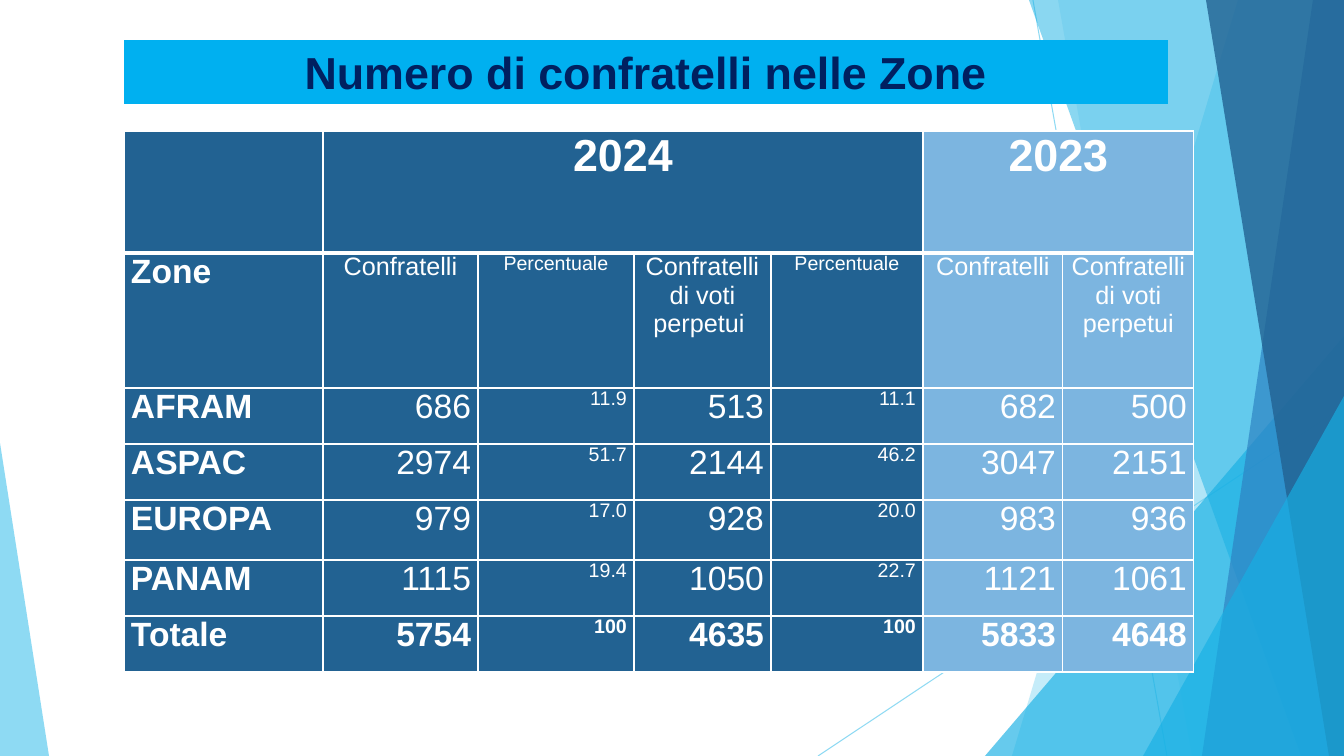
from pptx import Presentation
from pptx import util as u
from pptx.dml.color import RGBColor
from pptx.enum import shapes, text
from pptx.oxml import parse_xml
from pptx.oxml.ns import nsdecls, qn
from lxml import etree

PX = 914400 / 100.8
WIDTH, HEIGHT = 1344, 756
FONT = "Arial"
COLORS = {
    "white": "FFFFFF", "sky": "5FCBEF", "cyan": "17B0E4", "blue": "2E83C3",
    "navy": "226292", "pale": "7CB5E0", "banner": "00B0F0", "title": "002060",
}

LINES = [(1033, 0, 1167, HEIGHT), (WIDTH, 406, 818, HEIGHT)]
# Top-left x, bottom-left x, colour, opacity; each band runs to the right edge.
BACK_BANDS = [(1238, 1012, "sky", 36), (1058, 1192, "sky", 20)]
FRONT_BANDS = [(1029, 1301, "cyan", 50), (1313, 1202, "blue", 70), (1206, 1329, "navy", 80)]

COLUMNS = [199, 155, 156, 137, 152, 140, 131]
ROWS = [122, 135, 56, 56, 60, 56, 56]
FIRST_2023, PERCENT_COLUMNS = 5, (2, 4)
CELLS = [
    ["", "2024", "", "", "", "2023", ""],
    ["Zone", "Confratelli", "Percentuale", "Confratelli di voti perpetui ",
     "Percentuale", "Confratelli", "Confratelli di voti perpetui"],
    ["AFRAM", "686", "11.9", "513", "11.1", "682", "500"],
    ["ASPAC", "2974", "51.7", "2144", "46.2", "3047", "2151"],
    ["EUROPA", "979", "17.0", "928", "20.0", "983", "936"],
    ["PANAM", "1115", "19.4", "1050", "22.7", "1121", "1061"],
    ["Totale", "5754", "100", "4635", "100", "5833", "4648"],
]


def px(length):
    return u.Emu(round(length * PX))


def rgb(name):
    return RGBColor.from_string(COLORS[name])


def set_opacity(fill_parent, percent):
    color = fill_parent.find(".//" + qn("a:srgbClr"))
    etree.SubElement(color, qn("a:alpha"), val=str(percent * 1000))


def paint(shape, color, opacity):
    shape.shadow.inherit = False
    shape.fill.solid()
    shape.fill.fore_color.rgb = rgb(color)
    shape.line.fill.background()
    set_opacity(shape.element.spPr, opacity)


def add_line(page, x1, y1, x2, y2):
    line = page.shapes.add_connector(
        shapes.MSO_CONNECTOR.STRAIGHT, px(x1), px(y1), px(x2), px(y2))
    line.line.color.rgb = rgb("sky")
    line.line.width = u.Pt(0.75)
    set_opacity(line.element.spPr, 70)
    etree.SubElement(line.element.spPr, qn("a:effectLst"))


def add_band(page, top_x, bottom_x, color, opacity):
    builder = page.shapes.build_freeform(top_x, 0, scale=PX)
    builder.add_line_segments([(WIDTH, 0), (WIDTH, HEIGHT), (bottom_x, HEIGHT)])
    paint(builder.convert_to_shape(), color, opacity)


def add_triangle(page, left, top, width, apex, color, opacity):
    """Triangle standing on the bottom edge; apex is 0 (left) to 1 (right)."""
    triangle = page.shapes.add_shape(
        shapes.MSO_SHAPE.ISOSCELES_TRIANGLE, px(left), px(top), px(width), px(HEIGHT - top))
    triangle.adjustments[0] = apex
    paint(triangle, color, opacity)


def add_backdrop(page):
    for line in LINES:
        add_line(page, *line)
    for band in BACK_BANDS:
        add_band(page, *band)
    add_triangle(page, 985, 336, 359, 1, "cyan", 66)
    for band in FRONT_BANDS:
        add_band(page, *band)
    add_triangle(page, 1143, 396, 201, 1, "cyan", 66)
    add_triangle(page, 0, 443, 49, 0, "sky", 70)


def format_title(page, wording):
    title = page.shapes.title
    title.left, title.top, title.width, title.height = px(124), px(40), px(1044), px(64)
    title.fill.solid()
    title.fill.fore_color.rgb = rgb("banner")
    frame = title.text_frame
    frame.text = wording
    frame.auto_size = text.MSO_AUTO_SIZE.NONE
    frame.vertical_anchor = text.MSO_ANCHOR.MIDDLE
    para = frame.paragraphs[0]
    para.alignment = text.PP_ALIGN.CENTER
    set_font(para.font, 32, True, "title")
    page.shapes.element.append(title.element)  # in front of the backdrop


def set_font(font, size, bold, color):
    font.name, font.size, font.bold = FONT, u.Pt(size), bold
    font.color.rgb = rgb(color)


def add_borders(cell, top, bottom):
    properties = cell._tc.get_or_add_tcPr()
    for side, points in (("L", 1), ("R", 1), ("T", top), ("B", bottom)):
        properties.append(parse_xml(
            f'<a:ln{side} {nsdecls("a")} w="{u.Pt(points)}"><a:solidFill>'
            f'<a:srgbClr val="{COLORS["white"]}"/></a:solidFill></a:ln{side}>'))


def cell_style(row, column):
    """Return size, boldness and alignment by place in the table."""
    align = text.PP_ALIGN
    if row == 0:
        return 32, True, align.CENTER
    if column == 0:
        return 24, True, align.JUSTIFY if row == 1 else align.LEFT
    if row == 1:
        return 14 if column in PERCENT_COLUMNS else 18, False, align.CENTER
    return 14 if column in PERCENT_COLUMNS else 24, row == len(ROWS) - 1, align.RIGHT


def fill_cell(cell, row, column):
    add_borders(cell, 3 if row == 1 else 1, 3 if row == 0 else 1)
    cell.fill.solid()
    cell.fill.fore_color.rgb = rgb("pale" if column >= FIRST_2023 else "navy")
    cell.margin_left = cell.margin_right = px(7)
    cell.margin_top = cell.margin_bottom = 0
    if CELLS[row][column]:
        size, bold, alignment = cell_style(row, column)
        cell.text = CELLS[row][column]
        para = cell.text_frame.paragraphs[0]
        para.alignment = alignment
        para.space_after = u.Pt(10)
        set_font(para.font, size, bold, "white")


def add_zone_table(page):
    table = page.shapes.add_table(
        len(ROWS), len(COLUMNS), px(124), px(131), px(sum(COLUMNS)), px(sum(ROWS))).table
    table.first_row = table.horz_banding = False
    for column, width in zip(table.columns, COLUMNS):
        column.width = px(width)
    for row, height in zip(table.rows, ROWS):
        row.height = px(height)
    for row in range(len(ROWS)):
        for column in range(len(COLUMNS)):
            fill_cell(table.cell(row, column), row, column)
    table.cell(0, 1).merge(table.cell(0, FIRST_2023 - 1))
    table.cell(0, FIRST_2023).merge(table.cell(0, len(COLUMNS) - 1))


def main():
    deck = Presentation()
    deck.slide_width, deck.slide_height = px(WIDTH), px(HEIGHT)
    page = deck.slides.add_slide(deck.slide_layouts[5])
    add_backdrop(page)
    format_title(page, "Numero di confratelli nelle Zone")
    add_zone_table(page)
    deck.save("out.pptx")


if __name__ == "__main__":
    main()
